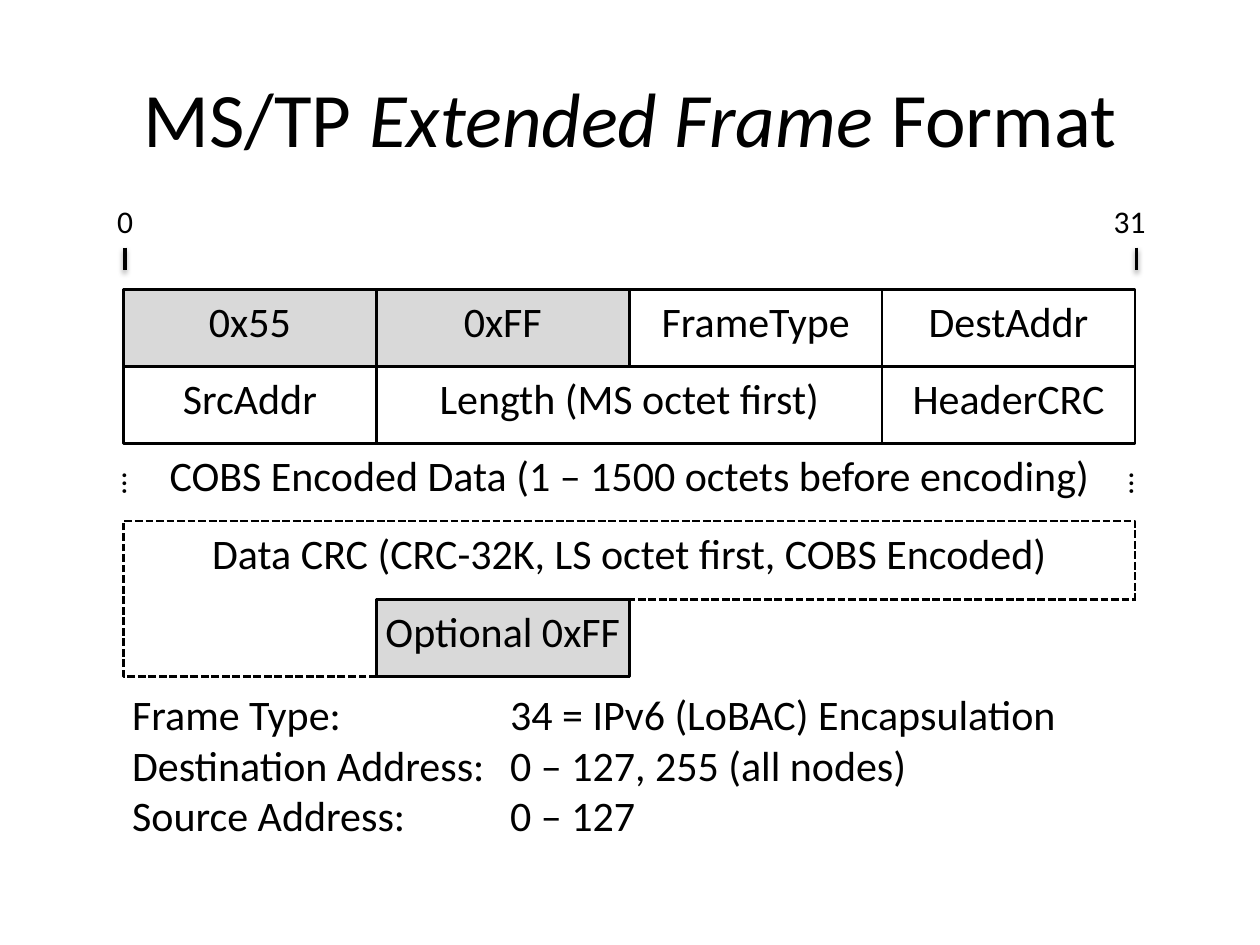
from lxml.etree import SubElement
from pptx import Presentation
from pptx.dml.color import RGBColor
from pptx.enum.dml import MSO_LINE
from pptx.enum.shapes import MSO_CONNECTOR, MSO_SHAPE
from pptx.enum.text import MSO_ANCHOR, PP_ALIGN
from pptx.oxml import parse_xml
from pptx.oxml.ns import nsdecls, qn
from pptx.util import Pt

BLACK, WHITE, GRAY = "000000", "FFFFFF", "D9D9D9"

# Grid of four octets per row
LEFT, TOP, COLUMN, ROW = 70.6, 165.6, 144.5, 44
DATA_TOP = TOP + 2 * ROW
CRC_TOP = TOP + 3 * ROW
OPTIONAL_TOP = 342.7


def color(hex_string):
    return RGBColor.from_string(hex_string)


def write(frame, lines, size=24, font="Calibri", ink=BLACK, align=PP_ALIGN.LEFT,
          anchor=MSO_ANCHOR.TOP, wrap=True, side_inset=7.2, tab=None):
    """Fill a text frame; each line is a list of (text, italic) runs."""
    frame.word_wrap = wrap
    frame.vertical_anchor = anchor
    frame.margin_left = frame.margin_right = Pt(side_inset)
    for index, line in enumerate(lines):
        paragraph = frame.paragraphs[0] if index == 0 else frame.add_paragraph()
        paragraph.alignment = align
        if tab:
            stops = SubElement(paragraph._p.get_or_add_pPr(), qn("a:tabLst"))
            SubElement(stops, qn("a:tab"), pos=str(Pt(tab)), algn="l")
        for text, italic in line:
            run = paragraph.add_run()
            run.text = text
            run.font.name = font
            run.font.size = Pt(size)
            run.font.italic = italic
            run.font.color.rgb = color(ink)


class FrameSlide:
    def __init__(self, slide, line_width=1.5, tick_width=2):
        self.slide = slide
        self.line_width = line_width
        self.tick_width = tick_width

    def box(self, left, top, width, height, text="", fill=None, outline=BLACK,
            dashed=False, **text_format):
        shape = self.slide.shapes.add_shape(
            MSO_SHAPE.RECTANGLE, Pt(left), Pt(top), Pt(width), Pt(height))
        shape.shadow.inherit = False
        if fill:
            shape.fill.solid()
            shape.fill.fore_color.rgb = color(fill)
        else:
            shape.fill.background()
        if outline:
            shape.line.color.rgb = color(outline)
            shape.line.width = Pt(self.line_width)
            if dashed:
                shape.line.dash_style = MSO_LINE.SQUARE_DOT
        else:
            shape.line.fill.background()
        if text:
            write(shape.text_frame, [[(text, False)]], align=PP_ALIGN.CENTER, **text_format)

    def text(self, left, top, width, height, lines, rotation=0, **text_format):
        shape = self.slide.shapes.add_textbox(Pt(left), Pt(top), Pt(width), Pt(height))
        shape.rotation = rotation
        write(shape.text_frame, lines, **text_format)

    def tick(self, x, top, height=13):
        connector = self.slide.shapes.add_connector(
            MSO_CONNECTOR.STRAIGHT, Pt(x), Pt(top), Pt(x), Pt(top + height))
        connector.line.color.rgb = color(BLACK)
        connector.line.width = Pt(self.tick_width)
        connector._element.spPr.append(parse_xml(
            f'<a:effectLst {nsdecls("a")}>'
            f'<a:outerShdw blurRad="{Pt(3.1)}" dist="{Pt(1.6)}" dir="5400000" rotWithShape="0">'
            f'<a:srgbClr val="{BLACK}"><a:alpha val="38000"/></a:srgbClr>'
            '</a:outerShdw></a:effectLst>'))


def main():
    presentation = Presentation()
    presentation.slide_width, presentation.slide_height = Pt(720), Pt(540)
    page = FrameSlide(presentation.slides.add_slide(presentation.slide_layouts[6]))

    # Data CRC outline and encoded data row
    page.box(LEFT, CRC_TOP, 4 * COLUMN, OPTIONAL_TOP + ROW - CRC_TOP,
             "Data CRC (CRC-32K, LS octet first, COBS Encoded)", dashed=True)
    page.text(LEFT, DATA_TOP, 4 * COLUMN, ROW,
              [[("COBS Encoded Data (1 – 1500 octets before encoding)", False)]],
              align=PP_ALIGN.CENTER)

    # Title
    page.text(36, 21.6, 648, 90,
              [[("MS/TP ", False), ("Extended Frame", True), (" Format", False)]],
              size=44, align=PP_ALIGN.CENTER, anchor=MSO_ANCHOR.MIDDLE)

    # Bit positions
    for label, label_left, label_width, tick_x in (("0", 59.8, 23, 71.3),
                                                   ("31", 629.3, 33, 649.4)):
        page.tick(tick_x, 141.5)
        page.text(label_left, 111.6, label_width, 29, [[(label, False)]], size=18, wrap=False)

    # Header fields: text, columns spanned, fill
    header = (
        (("0x55", 1, GRAY), ("0xFF", 1, GRAY), ("FrameType", 1, None), ("DestAddr", 1, WHITE)),
        (("SrcAddr", 1, WHITE), ("Length (MS octet first)", 2, WHITE), ("HeaderCRC", 1, WHITE)),
    )
    for row, fields in enumerate(header):
        column = 0
        for name, span, fill in fields:
            page.box(LEFT + column * COLUMN, TOP + row * ROW, span * COLUMN, ROW, name, fill)
            column += span

    # Optional octet, with the unused part of its row cut out of the outline
    middle = LEFT + 2 * COLUMN
    page.box(LEFT + COLUMN, OPTIONAL_TOP, COLUMN, ROW, "Optional 0xFF", GRAY, side_inset=0)
    page.box(middle, OPTIONAL_TOP, 2 * COLUMN, ROW - 1, dashed=True)
    page.box(middle + 1, OPTIONAL_TOP + 0.8, 2 * COLUMN, ROW, fill=WHITE, outline=None)

    # Continuation dots
    for left in (51.1, 626.4):
        page.text(left, 261.4, 28, 29, [[("…", False)]], rotation=270, size=18, wrap=False)

    # Field values
    values = ("Frame Type:\t34 = IPv6 (LoBAC) Encapsulation",
              "Destination Address:\t0 – 127, 255 (all nodes)",
              "Source Address:\t0 – 127")
    page.text(68.4, 390.2, 567.4, 100.8, [[(value, False)] for value in values], tab=216)

    presentation.save("out.pptx")


if __name__ == "__main__":
    main()
